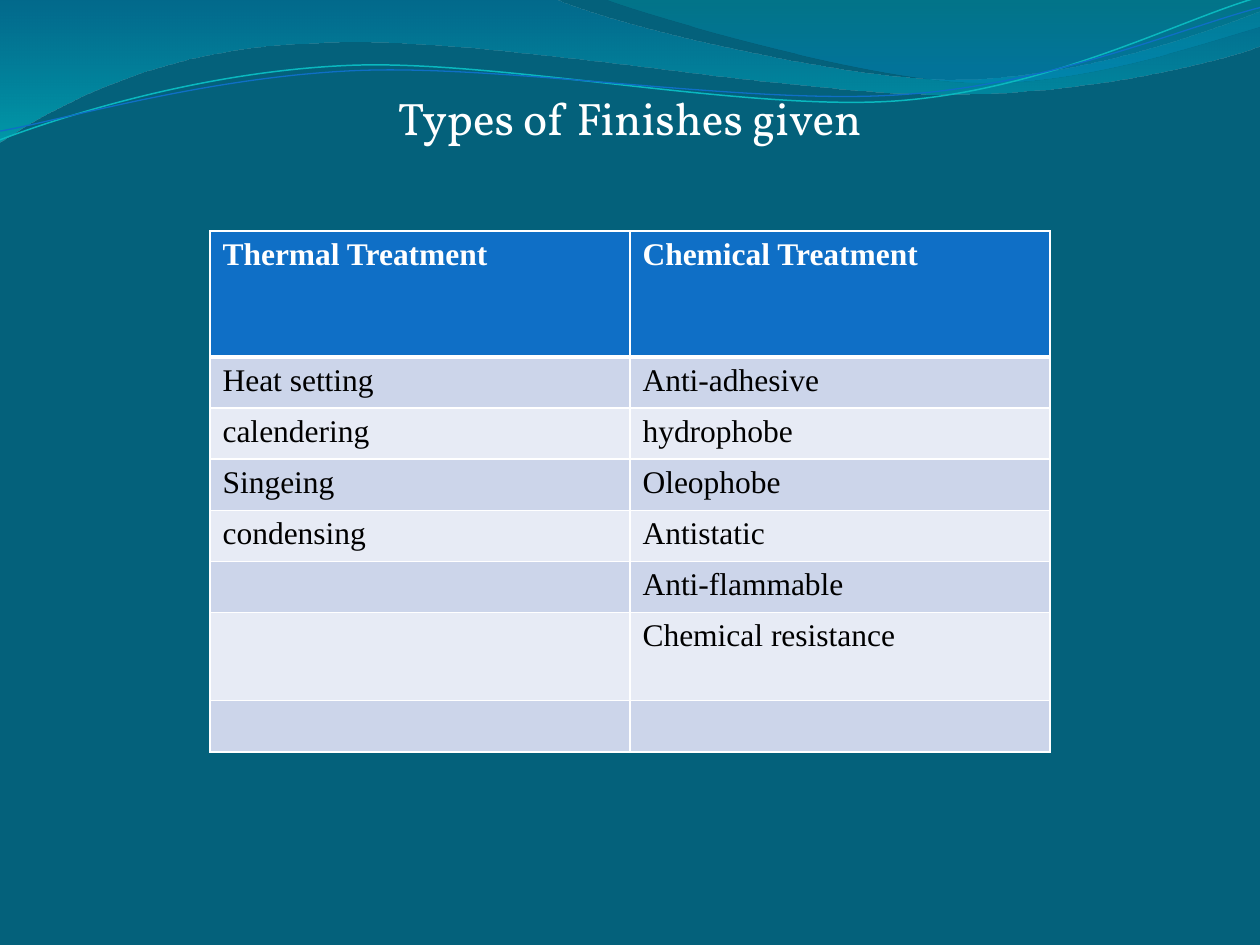
from dataclasses import dataclass
from typing import Optional

import lxml.etree
import pptx
import pptx.dml.color
import pptx.enum.text
import pptx.oxml
import pptx.oxml.ns
import pptx.util

Pt = pptx.util.Pt
qn = pptx.oxml.ns.qn

WHITE, BLACK, BLUE = "FFFFFF", "000000", "0F6FC6"
BANDS = ("CCD5EA", "E7EBF5")


@dataclass
class Stop:
    position: float
    color: str
    opacity: int


@dataclass
class Wave:
    """Segments of two numbers are straight lines, of six are Bezier curves."""
    start: tuple
    segments: list
    stops: Optional[tuple] = None
    line: Optional[str] = None
    width: float = 0


WAVES = [
    Wave((0, 0), [
        (316.8, -0.7),
        (342.7, 12.2, 478.1, 45.4, 545.8, 45.4),
        (614.2, 45.4, 689.8, 18.7, 720, 6.5),
        (720.7, 25.9),
        (707.8, 31.7, 626.4, 54.7, 537.1, 54),
        (447.8, 54, 275, 20.2, 185, 24.5),
        (92.9, 25.9, 33.1, 59.8, -0.7, 81.4),
    ], stops=(Stop(0, "0074A1", 45), Stop(1, "00C6CF", 55))),
    Wave((344.9, -0.7), [
        (366.5, 7.9, 491, 44.6, 553.7, 46.8),
        (616.3, 49.7, 691.9, 23, 720, 15.1),
        (720, 0),
    ], stops=(Stop(0, "00A1A9", 30), Stop(0.8, "008BBF", 45))),
    Wave((0, 79.9), [
        (34.6, 67, 113.8, 41, 199.4, 37.4),
        (284.4, 33.8, 427, 64.1, 513.4, 57.6),
        (599.8, 51.1, 675.4, 10.8, 718.6, -1.4),
    ], line="0AB8BF", width=0.85),
    Wave((0, 74.9), [
        (33.8, 69.1, 118.1, 43.9, 203.8, 40.3),
        (290.2, 36.7, 429.8, 60.5, 516.2, 54),
        (601.9, 48.2, 677.5, 15.1, 720, 4.3),
    ], line=BLUE, width=0.75),
]

ROWS = [
    ("Thermal Treatment", "Chemical Treatment"),
    ("Heat setting", "Anti-adhesive"),
    ("calendering", "hydrophobe"),
    ("Singeing", "Oleophobe"),
    ("condensing", "Antistatic"),
    ("", "Anti-flammable"),
    ("", "Chemical resistance"),
    ("", ""),
]
ROW_HEIGHTS = [72] + [29.2] * 5 + [50.4, 28.8]


def rgb(value: str) -> pptx.dml.color.RGBColor:
    return pptx.dml.color.RGBColor.from_string(value)


def format_run(r, color: str, **values) -> None:
    for name, value in values.items():
        setattr(r.font, name, value)
    r.font.color.rgb = rgb(color)


def bend_segments(sp, segments: list) -> None:
    """Turn the straight pieces of a freeform into its Bezier curves."""
    for piece, seg in zip(list(sp._element.iter(qn("a:lnTo"))), segments):
        if len(seg) == 2:
            continue
        piece.tag = qn("a:cubicBezTo")
        piece.remove(piece[0])
        for x, y in zip(seg[::2], seg[1::2]):
            pt = lxml.etree.SubElement(piece, qn("a:pt"))
            pt.set("x", str(Pt(x) - sp.left))
            pt.set("y", str(Pt(y) - sp.top))


def draw_wave(s, wave: Wave) -> None:
    first, *rest = [(Pt(x), Pt(y)) for x, y in
                    [wave.start] + [seg[-2:] for seg in wave.segments]]
    builder = s.shapes.build_freeform(*first, scale=1.0)
    builder.add_line_segments(rest, close=wave.stops is not None)
    sp = builder.convert_to_shape()
    bend_segments(sp, wave.segments)
    sp.shadow.inherit = False
    if wave.stops is None:
        sp.fill.background()
        sp.line.color.rgb = rgb(wave.line)
        sp.line.width = Pt(wave.width)
        return
    sp.line.fill.background()
    sp.fill.gradient()
    sp.fill.gradient_angle = 270
    for gs, stop in zip(sp.fill.gradient_stops, wave.stops):
        gs.position = stop.position
        gs.color.rgb = rgb(stop.color)
    for clr, stop in zip(sp._element.spPr.iter(qn("a:srgbClr")), wave.stops):
        alpha = lxml.etree.SubElement(clr, qn("a:alpha"))
        alpha.set("val", str(stop.opacity * 1000))


def set_borders(cell, widths: dict) -> None:
    tcPr = cell._tc.get_or_add_tcPr()
    for index, (side, width) in enumerate(widths.items()):
        ln = pptx.oxml.parse_xml(
            f'<a:{side} {pptx.oxml.ns.nsdecls("a")} w="{Pt(width)}">'
            f'<a:solidFill><a:srgbClr val="{WHITE}"/></a:solidFill></a:{side}>')
        tcPr.insert(index, ln)


def draw_title(s, text: str) -> None:
    s.shapes.title._element.getparent().remove(s.shapes.title._element)
    sp = s.placeholders[1]
    box = {"left": 36, "top": 48, "width": 648, "height": 450}
    for name, value in box.items():
        setattr(sp, name, Pt(value))
    tf = sp.text_frame
    tf.auto_size = pptx.enum.text.MSO_AUTO_SIZE.NONE
    p = tf.paragraphs[0]
    p.alignment = pptx.enum.text.PP_ALIGN.CENTER
    p.space_before = Pt(5.2)
    pPr = p._p.get_or_add_pPr()
    for name in ("marL", "indent"):
        pPr.set(name, "0")
    lxml.etree.SubElement(pPr, qn("a:buNone"))
    r = p.add_run()
    r.text = text
    format_run(r, WHITE, name="Vollkorn", size=Pt(26))


def draw_table(s) -> None:
    table = s.shapes.add_table(len(ROWS), 2, Pt(120), Pt(132),
                               Pt(480), Pt(sum(ROW_HEIGHTS))).table
    table.first_row = table.horz_banding = False
    for i, (texts, height) in enumerate(zip(ROWS, ROW_HEIGHTS)):
        header = i == 0
        table.rows[i].height = Pt(height)
        for j, text in enumerate(texts):
            cell = table.cell(i, j)
            cell.fill.solid()
            cell.fill.fore_color.rgb = rgb(BLUE if header else BANDS[(i - 1) % 2])
            set_borders(cell, {"lnL": 1, "lnR": 1, "lnT": 3 if i == 1 else 1,
                               "lnB": 3 if header else 1})
            if text:
                r = cell.text_frame.paragraphs[0].add_run()
                r.text = text
                format_run(r, WHITE if header else BLACK,
                           name="Times New Roman", size=Pt(18), bold=header)


def main() -> None:
    prs = pptx.Presentation()
    prs.slide_width, prs.slide_height = Pt(720), Pt(540)
    s = prs.slides.add_slide(prs.slide_layouts[1])

    # Background and waves
    s.background.fill.solid()
    s.background.fill.fore_color.rgb = rgb("04617B")
    for wave in WAVES:
        draw_wave(s, wave)

    # Heading and table
    draw_title(s, "Types of Finishes given")
    draw_table(s)
    prs.save("out.pptx")


if __name__ == "__main__":
    main()
